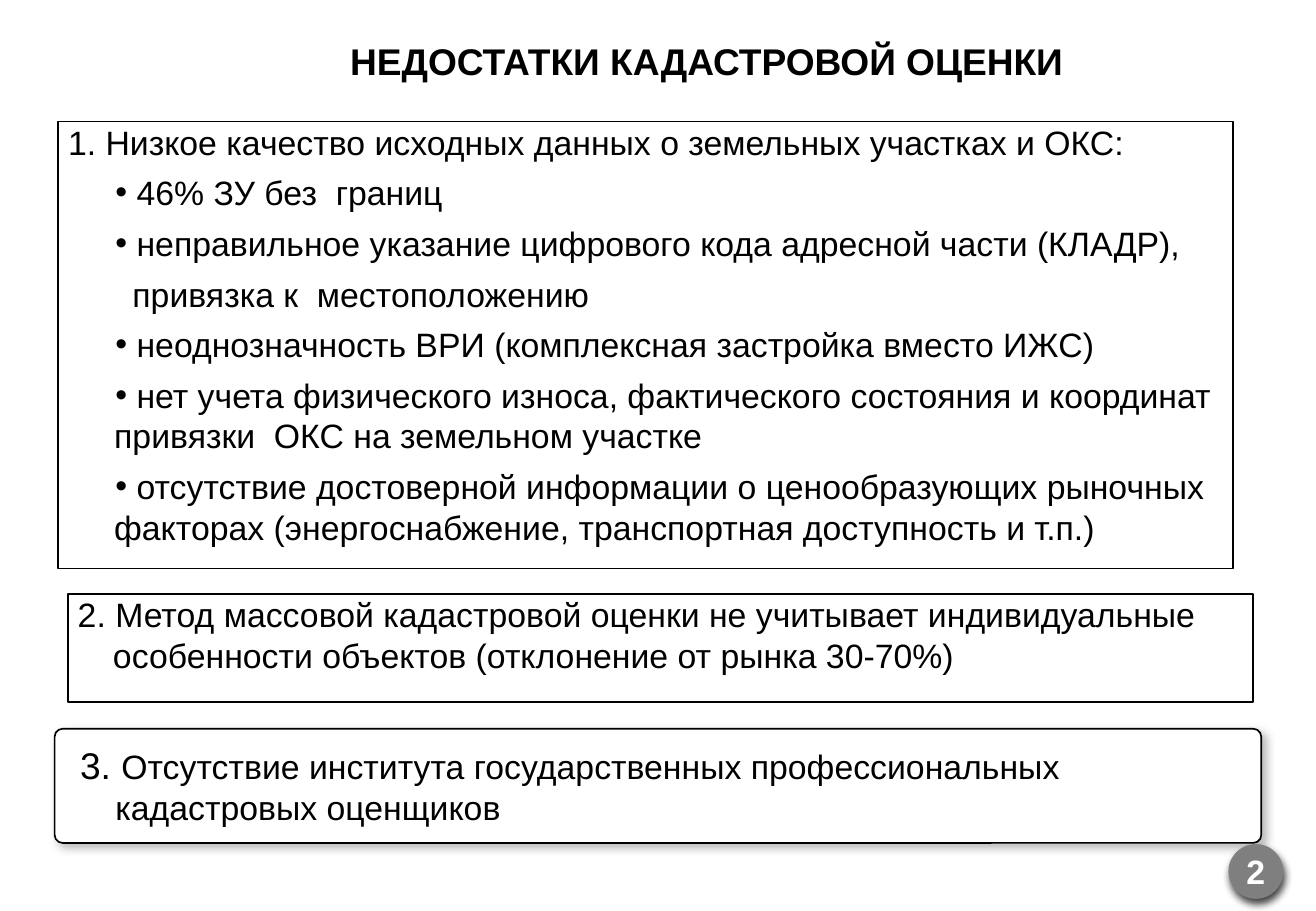
from dataclasses import dataclass

from lxml import etree
from pptx import Presentation
from pptx.dml.color import RGBColor
from pptx.enum.shapes import MSO_SHAPE
from pptx.enum.text import MSO_ANCHOR, MSO_AUTO_SIZE, PP_ALIGN
from pptx.oxml.ns import qn
from pptx.util import Inches, Pt

RECTANGLE, ROUNDED, OVAL = MSO_SHAPE.RECTANGLE, MSO_SHAPE.ROUNDED_RECTANGLE, MSO_SHAPE.OVAL
TOP, MIDDLE, BOTTOM = MSO_ANCHOR.TOP, MSO_ANCHOR.MIDDLE, MSO_ANCHOR.BOTTOM
LEFT, CENTER = PP_ALIGN.LEFT, PP_ALIGN.CENTER
NO_AUTO_SIZE = MSO_AUTO_SIZE.NONE
FONT = "Arial"
COLOURS = {"text": "000000", "paper": "FFFFFF", "badge": "7F7F7F",
           "badge_line": "808080", "soft_shadow": "A6A6A6"}


@dataclass
class Run:
    text: str
    size: float = 20
    bold: bool = False
    colour: str = "text"


@dataclass
class Item:
    runs: list[Run]
    margin: float = 0
    indent: float = 0
    bullet: bool = False
    before: float = 6
    align: PP_ALIGN = LEFT
    spacing: float = 1.0


@dataclass
class Box:
    left: float
    top: float
    width: float
    height: float


@dataclass
class Shadow:
    colour: str
    distance: float
    angle: int


def place(shape, box: Box) -> None:
    shape.left, shape.top = Inches(box.left), Inches(box.top)
    shape.width, shape.height = Inches(box.width), Inches(box.height)


def outline(shape, colour: str = "text", width: float = 1) -> None:
    shape.line.color.rgb = RGBColor.from_string(COLOURS[colour])
    shape.line.width = Pt(width)


def write(shape, items: list[Item], anchor: MSO_ANCHOR = TOP, side: float = 0.08,
          edge: float = 0) -> None:
    frame = shape.text_frame
    frame.word_wrap = True
    frame.auto_size = NO_AUTO_SIZE
    frame.vertical_anchor = anchor
    frame.margin_left = frame.margin_right = Inches(side)
    frame.margin_top = frame.margin_bottom = Inches(edge)
    for index, item in enumerate(items):
        paragraph = frame.paragraphs[0] if index == 0 else frame.add_paragraph()
        paragraph.alignment = item.align
        paragraph.line_spacing = item.spacing
        paragraph.space_before = Pt(item.before)
        properties = paragraph._p.get_or_add_pPr()
        properties.set("marL", str(Inches(item.margin)))
        properties.set("indent", str(Inches(item.indent)))
        if item.bullet:
            etree.SubElement(properties, qn("a:buChar")).set("char", "•")
        else:
            etree.SubElement(properties, qn("a:buNone"))
        for part in item.runs:
            run = paragraph.add_run()
            run.text = part.text
            run.font.name, run.font.size, run.font.bold = FONT, Pt(part.size), part.bold
            run.font.color.rgb = RGBColor.from_string(COLOURS[part.colour])


def cast_shadow(shape, shadow: Shadow) -> None:
    effects = shape._element.spPr.find(qn("a:effectLst"))
    outer = etree.SubElement(effects, qn("a:outerShdw"), blurRad=str(Pt(5)),
                             dist=str(Pt(shadow.distance)),
                             dir=str(shadow.angle * 60000), rotWithShape="0")
    colour = etree.SubElement(outer, qn("a:srgbClr"), val=COLOURS[shadow.colour])
    etree.SubElement(colour, qn("a:alpha"), val="75000")


def add_panel(slide, kind: MSO_SHAPE, box: Box, fill: str | None = None,
              line: str = "text", line_width: float = 1, shadow: Shadow | None = None):
    shape = slide.shapes.add_shape(kind, 0, 0, 0, 0)
    place(shape, box)
    if fill:
        shape.fill.solid()
        shape.fill.fore_color.rgb = RGBColor.from_string(COLOURS[fill])
    else:
        shape.fill.background()
    outline(shape, line, line_width)
    shape.shadow.inherit = False
    if shadow:
        cast_shadow(shape, shadow)
    return shape


def bullet(text: str) -> Item:
    return Item([Run(" " + text)], margin=0.38, indent=0.01, bullet=True)


def numbered(runs: list[Run]) -> Item:
    return Item(runs, margin=0.29, indent=-0.29)


DATA_QUALITY = [
    Item([Run("1. Низкое качество исходных данных о земельных участках и ОКС:")]),
    bullet("46% ЗУ без  границ"),
    bullet("неправильное указание цифрового кода адресной части (КЛАДР),"),
    Item([Run("привязка к  местоположению")], margin=0.53),
    bullet("неоднозначность ВРИ (комплексная застройка вместо ИЖС)"),
    bullet("нет учета физического износа, фактического состояния и координат "
           "привязки  ОКС на земельном участке"),
    bullet("отсутствие достоверной информации о ценообразующих рыночных факторах "
           "(энергоснабжение, транспортная доступность и т.п.)"),
]
MASS_METHOD = numbered([Run("2. Метод массовой кадастровой оценки не учитывает индивидуальные "
                            "особенности объектов (отклонение от рынка 30-70%)")])
NO_APPRAISERS = numbered([Run("3. ", 22),
                          Run("Отсутствие института государственных профессиональных "
                              "кадастровых оценщиков")])


def main() -> None:
    presentation = Presentation()
    presentation.slide_width, presentation.slide_height = Inches(10.83), Inches(7.5)
    slide = presentation.slides.add_slide(presentation.slide_layouts[1])

    # Title
    title = slide.shapes.title
    place(title, Box(1.09, 0.18, 9.45, 0.56))
    write(title, [Item([Run("НЕДОСТАТКИ КАДАСТРОВОЙ ОЦЕНКИ", 22, True)],
                       before=0, align=CENTER, spacing=0.9)], BOTTOM, 0.1, 0.05)

    # First drawback with its list
    body = slide.placeholders[1]
    place(body, Box(0.48, 1, 9.67, 3.68))
    outline(body)
    write(body, DATA_QUALITY)

    # Second drawback
    method = add_panel(slide, RECTANGLE, Box(0.56, 4.89, 9.75, 0.89))
    write(method, [MASS_METHOD])

    # Third drawback: raised panel and its text
    panel = add_panel(slide, ROUNDED, Box(0.45, 6, 9.93, 0.94), "paper",
                      shadow=Shadow("soft_shadow", 3, 45))
    panel.adjustments[0] = 0.07
    appraisers = slide.shapes.add_textbox(0, 0, 0, 0)
    place(appraisers, Box(0.58, 6.11, 9.67, 0.74))
    write(appraisers, [NO_APPRAISERS])

    # Page number badge
    badge = add_panel(slide, OVAL, Box(10.12, 6.96, 0.43, 0.43), "badge", "badge_line", 1.5,
                      Shadow("text", 3.2, 72))
    write(badge, [Item([Run("2", 20, True, "paper")], before=0, align=CENTER)], MIDDLE, 0)

    presentation.save("out.pptx")


if __name__ == "__main__":
    main()
